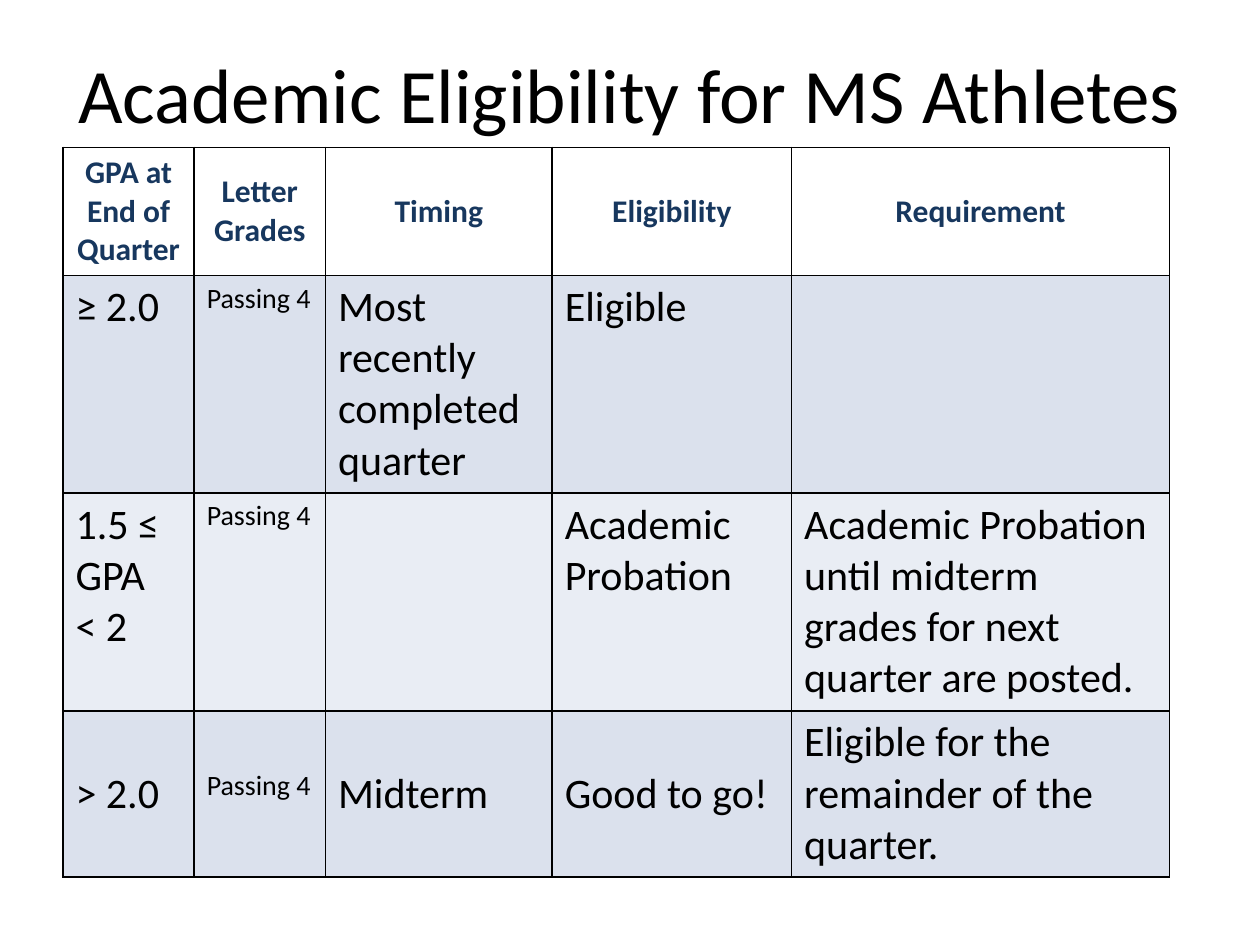
from pptx import Presentation
from pptx.dml.color import RGBColor
from pptx.enum.text import MSO_ANCHOR, PP_ALIGN
from pptx.oxml.ns import qn
from pptx.util import Pt
from lxml.etree import SubElement

FONT = "Calibri"
COLORS = {"text": "000000", "header": "17375E", "border": "000000",
          "dark_band": "D0D8E8", "light_band": "E9EDF4"}
COLUMN_WIDTHS = [75, 75, 129.6, 136.8, 216]
ROW_HEIGHTS = [73, 124, 124.5, 95]
LINE_HEIGHT = 29.3  # one 24 pt line

HEADERS = ["GPA at End of Quarter", "Letter Grades", "Timing",
           "Eligibility", "Requirement"]
# Each row: band colour, opacity in percent, cells as (text, lines down)
ROWS = [
    ("dark_band", 75, [("≥ 2.0", 0), ("Passing 4", 0),
                       ("Most recently completed quarter", 0),
                       ("Eligible", 0), ("", 0)]),
    ("light_band", 100, [("1.5 ≤ GPA\n< 2", 0), ("Passing 4", 0), ("", 0),
                         ("Academic Probation", 0),
                         ("Academic Probation until midterm grades "
                          "for next quarter are posted.", 0)]),
    ("dark_band", 75, [("> 2.0", 1), ("Passing 4", 1), ("Midterm", 1),
                       ("Good to go!", 1),
                       ("Eligible for the remainder of the quarter.", 0)]),
]


class SlideBuilder:
    def __init__(self, presentation):
        self.slide = presentation.slides.add_slide(presentation.slide_layouts[5])

    def add_text(self, frame, text, size, color="text", bold=False,
                 align=PP_ALIGN.LEFT):
        for index, line in enumerate(text.split("\n")):
            paragraph = frame.add_paragraph() if index else frame.paragraphs[0]
            paragraph.alignment = align
            if not line:
                continue
            run = paragraph.add_run()
            run.text = line
            run.font.name = FONT
            run.font.size = Pt(size)
            run.font.bold = bold
            run.font.color.rgb = RGBColor.from_string(COLORS[color])

    def title(self, text, left, top, width, height):
        shape = self.slide.shapes.title
        shape.left, shape.top = Pt(left), Pt(top)
        shape.width, shape.height = Pt(width), Pt(height)
        shape.text_frame.vertical_anchor = MSO_ANCHOR.MIDDLE
        self.add_text(shape.text_frame, text, 44, align=PP_ALIGN.CENTER)

    def table(self, left, top, widths, heights):
        shape = self.slide.shapes.add_table(
            len(heights), len(widths), Pt(left), Pt(top),
            Pt(sum(widths)), Pt(sum(heights)))
        table = shape.table
        table.first_row = table.horz_banding = False
        for column, width in zip(table.columns, widths):
            column.width = Pt(width)
        for row, height in zip(table.rows, heights):
            row.height = Pt(height)
        for cell in table.iter_cells():
            self.borders(cell)
        return table

    def borders(self, cell):
        properties = cell._tc.get_or_add_tcPr()
        for side in ("a:lnL", "a:lnR", "a:lnT", "a:lnB"):
            line = SubElement(properties, qn(side), w=str(Pt(1)))
            fill = SubElement(line, qn("a:solidFill"))
            SubElement(fill, qn("a:srgbClr"), val=COLORS["border"])

    def header_cell(self, cell, text):
        cell.fill.background()
        cell.vertical_anchor = MSO_ANCHOR.MIDDLE
        self.add_text(cell.text_frame, text, 18, "header", True,
                      PP_ALIGN.CENTER)

    def body_cell(self, cell, text, size, band, opacity, lines_down):
        cell.fill.solid()
        cell.fill.fore_color.rgb = RGBColor.from_string(COLORS[band])
        if opacity < 100:
            color = cell._tc.tcPr.find(qn("a:solidFill")).find(qn("a:srgbClr"))
            SubElement(color, qn("a:alpha"), val=str(opacity * 1000))
        cell.margin_top = Pt(3.6 + lines_down * LINE_HEIGHT)
        self.add_text(cell.text_frame, text, size)


def main():
    presentation = Presentation()
    presentation.slide_width, presentation.slide_height = Pt(720), Pt(540)
    builder = SlideBuilder(presentation)

    # Title
    builder.title("Academic Eligibility for MS Athletes", 36, 21.6, 648, 62.6)

    # Eligibility table
    table = builder.table(36, 84.2, COLUMN_WIDTHS, ROW_HEIGHTS)
    for column, text in enumerate(HEADERS):
        builder.header_cell(table.cell(0, column), text)
    for row, (band, opacity, cells) in enumerate(ROWS, 1):
        for column, (text, lines_down) in enumerate(cells):
            size = 16 if HEADERS[column] == "Letter Grades" else 24
            builder.body_cell(table.cell(row, column), text, size,
                              band, opacity, lines_down)

    presentation.save("out.pptx")


if __name__ == "__main__":
    main()
